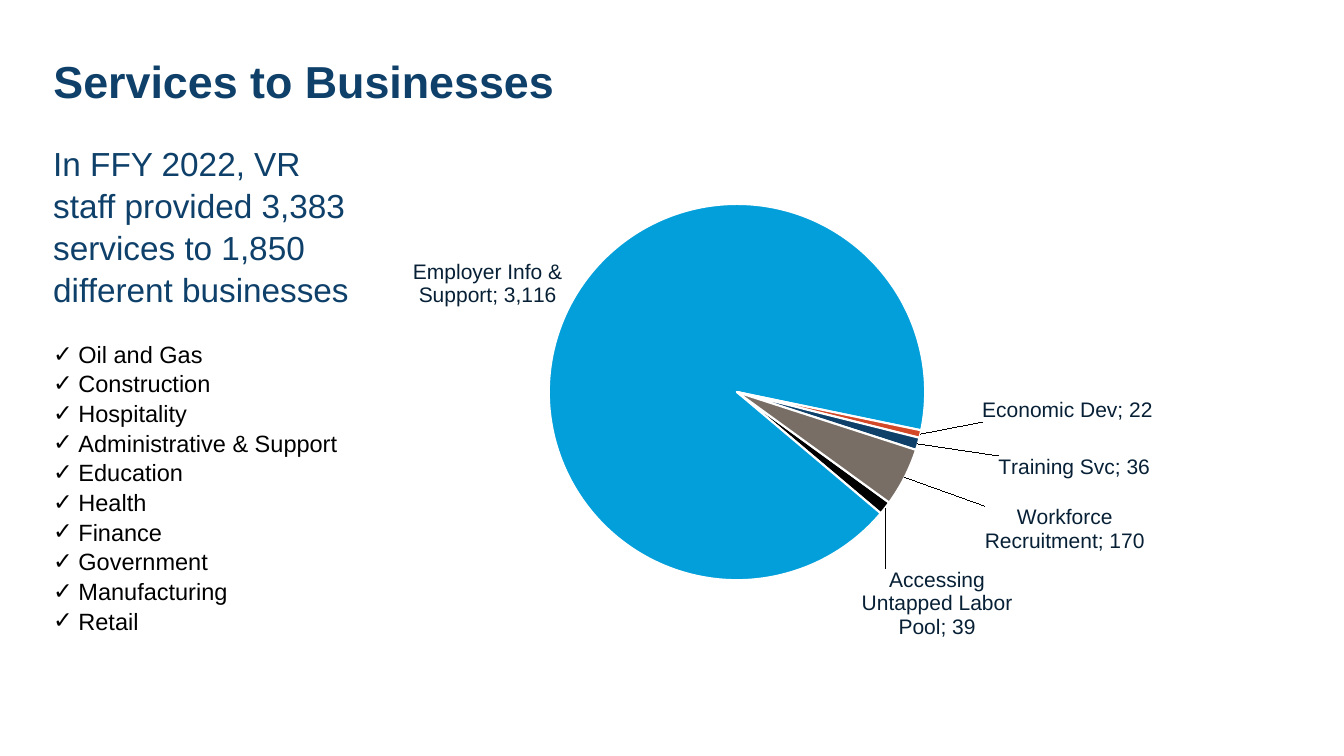
from dataclasses import dataclass

from lxml.etree import SubElement
from pptx import Presentation
from pptx.chart.data import CategoryChartData
from pptx.dml.color import RGBColor
from pptx.enum.chart import XL_CHART_TYPE, XL_LABEL_POSITION
from pptx.enum.text import MSO_ANCHOR, PP_ALIGN
from pptx.oxml import parse_xml
from pptx.oxml.ns import nsdecls, qn
from pptx.util import Inches, Pt


@dataclass(frozen=True)
class Theme:
    font: str = "Arial"
    chart_font: str = "Calibri"
    navy: str = "0E406A"
    label: str = "072035"
    black: str = "000000"
    white: str = "FFFFFF"
    blue: str = "039FDA"
    red: str = "D34927"
    taupe: str = "796E66"
    title_size: float = 32
    lead_size: float = 23.8
    list_size: float = 16.8
    label_size: float = 15
    chart_size: float = 10


THEME = Theme()

INDUSTRIES = [
    "Oil and Gas", "Construction", "Hospitality", "Administrative & Support",
    "Education", "Health", "Finance", "Government", "Manufacturing", "Retail",
]

# Service, count, slice colour, label shift as a share of the chart's size
SERVICES = [
    ("Accessing Untapped Labor Pool", 39, THEME.black, (-0.03, 0.11)),
    ("Employer Info & Support", 3116, THEME.blue, None),
    ("Economic Dev", 22, THEME.red, (0.06, -0.07)),
    ("Training Svc", 36, THEME.navy, (0.08, 0.02)),
    ("Workforce Recruitment", 170, THEME.taupe, (0.08, 0.05)),
]


def style_font(font, size, color, name=THEME.font, bold=False):
    for attribute, value in {"size": Pt(size), "name": name, "bold": bold}.items():
        setattr(font, attribute, value)
    font.color.rgb = RGBColor.from_string(color)


def add_title(slide, text):
    title = slide.shapes.title
    title.left, title.top = Inches(0.43), Inches(0.48)
    title.width, title.height = Inches(9.97), Inches(0.64)
    title.text_frame.text = text
    title.text_frame.vertical_anchor = MSO_ANCHOR.MIDDLE
    heading = title.text_frame.paragraphs[0]
    heading.alignment = PP_ALIGN.LEFT
    style_font(heading.font, THEME.title_size, THEME.navy, bold=True)


def add_check_bullet(paragraph):
    properties = paragraph._p.get_or_add_pPr()
    indent = Inches(0.25)
    properties.set("marL", str(indent))
    properties.set("indent", str(-indent))
    SubElement(properties, qn("a:buFont")).set("typeface", THEME.font)
    SubElement(properties, qn("a:buChar")).set("char", "✓")


def add_summary(slide, lead_text, industries):
    box = slide.shapes.add_textbox(Inches(0.43), Inches(1.35), Inches(3.3), Inches(4.97))
    frame = box.text_frame
    frame.word_wrap = True
    lead = frame.paragraphs[0]
    lead.text = lead_text
    lead.line_spacing = 1.05
    style_font(lead.font, THEME.lead_size, THEME.navy)
    for position, industry in enumerate(industries):
        item = frame.add_paragraph()
        item.text = industry
        item.line_spacing = 1.05
        item.space_before = Pt(0 if position else 21)
        add_check_bullet(item)
        style_font(item.font, THEME.list_size, THEME.black)


def manual_layout(**values):
    settings = "".join(f'<c:{key} val="{value}"/>' for key, value in values.items())
    return parse_xml(
        f'<c:layout {nsdecls("c")}><c:manualLayout>{settings}</c:manualLayout></c:layout>'
    )


def format_labels(labels):
    for attribute, value in {
        "show_value": True,
        "show_category_name": True,
        "show_percentage": False,
        "position": XL_LABEL_POSITION.OUTSIDE_END,
        "number_format": "#,##0",
        "number_format_is_linked": False,
    }.items():
        setattr(labels, attribute, value)
    style_font(labels.font, THEME.label_size, THEME.label)
    labels._element.find(qn("c:showLeaderLines")).set("val", "1")


def shift_label(point, shift):
    """Move one slice's label away from its automatic place."""
    label = point.data_label
    style_font(label.font, THEME.label_size, THEME.label)
    label.position = XL_LABEL_POSITION.OUTSIDE_END
    element = label._dLbl
    element.find(qn("c:showCatName")).set("val", "1")
    x, y = shift
    element.find(qn("c:idx")).addnext(manual_layout(x=x, y=y))


def add_services_pie(slide, services):
    data = CategoryChartData(number_format="#,##0")
    data.categories = [service[0] for service in services]
    data.add_series("Series 1", [service[1] for service in services])
    chart = slide.shapes.add_chart(
        XL_CHART_TYPE.PIE, Inches(2.87), Inches(1.91), Inches(9.27), Inches(5.17), data
    ).chart
    chart.has_legend = chart.has_title = False
    style_font(chart.font, THEME.chart_size, THEME.navy, THEME.chart_font)

    plot = chart.plots[0]
    plot.vary_by_categories = True
    pie = plot._element
    first_angle = pie.find(qn("c:firstSliceAng"))
    if first_angle is None:
        first_angle = SubElement(pie, qn("c:firstSliceAng"))
    first_angle.set("val", "126")

    area = pie.getparent()
    for automatic in area.findall(qn("c:layout")):
        area.remove(automatic)
    area.insert(0, manual_layout(
        layoutTarget="inner", xMode="edge", yMode="edge", x=0.255, y=0.022, w=0.448, h=0.722
    ))

    series = plot.series[0]
    format_labels(series.data_labels)
    for index, (_, _, color, shift) in enumerate(services):
        point = series.points[index]
        point.format.fill.solid()
        point.format.fill.fore_color.rgb = RGBColor.from_string(color)
        point.format.line.color.rgb = RGBColor.from_string(THEME.white)
        point.format.line.width = Pt(1.5)
        if shift:
            shift_label(point, shift)


def main():
    deck = Presentation()
    deck.slide_width, deck.slide_height = Inches(13.33), Inches(7.5)
    slide = deck.slides.add_slide(deck.slide_layouts[5])
    add_title(slide, "Services to Businesses")
    add_summary(
        slide,
        "In FFY 2022, VR staff provided 3,383 services to 1,850 different businesses",
        INDUSTRIES,
    )
    add_services_pie(slide, SERVICES)
    deck.save("out.pptx")


if __name__ == "__main__":
    main()
